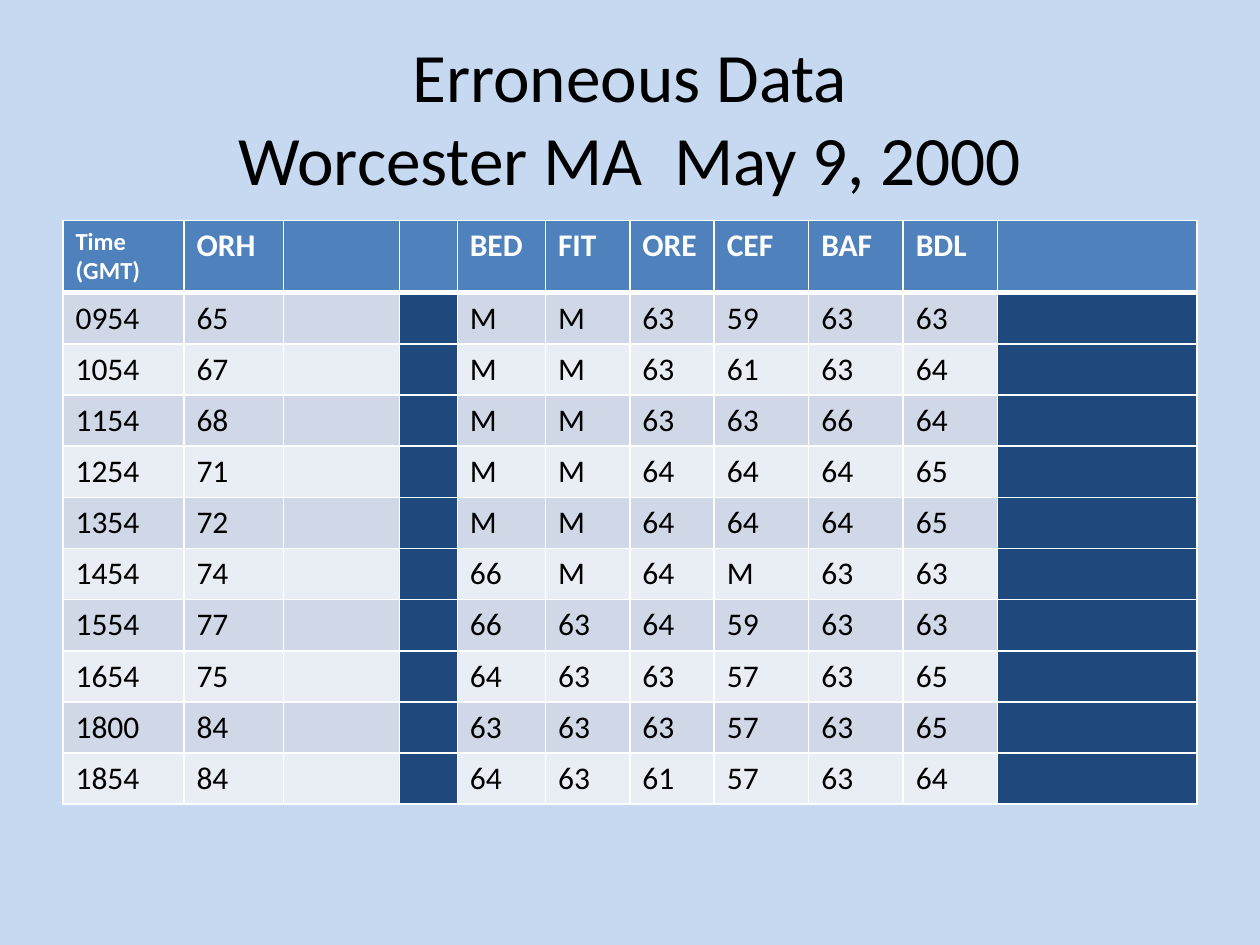
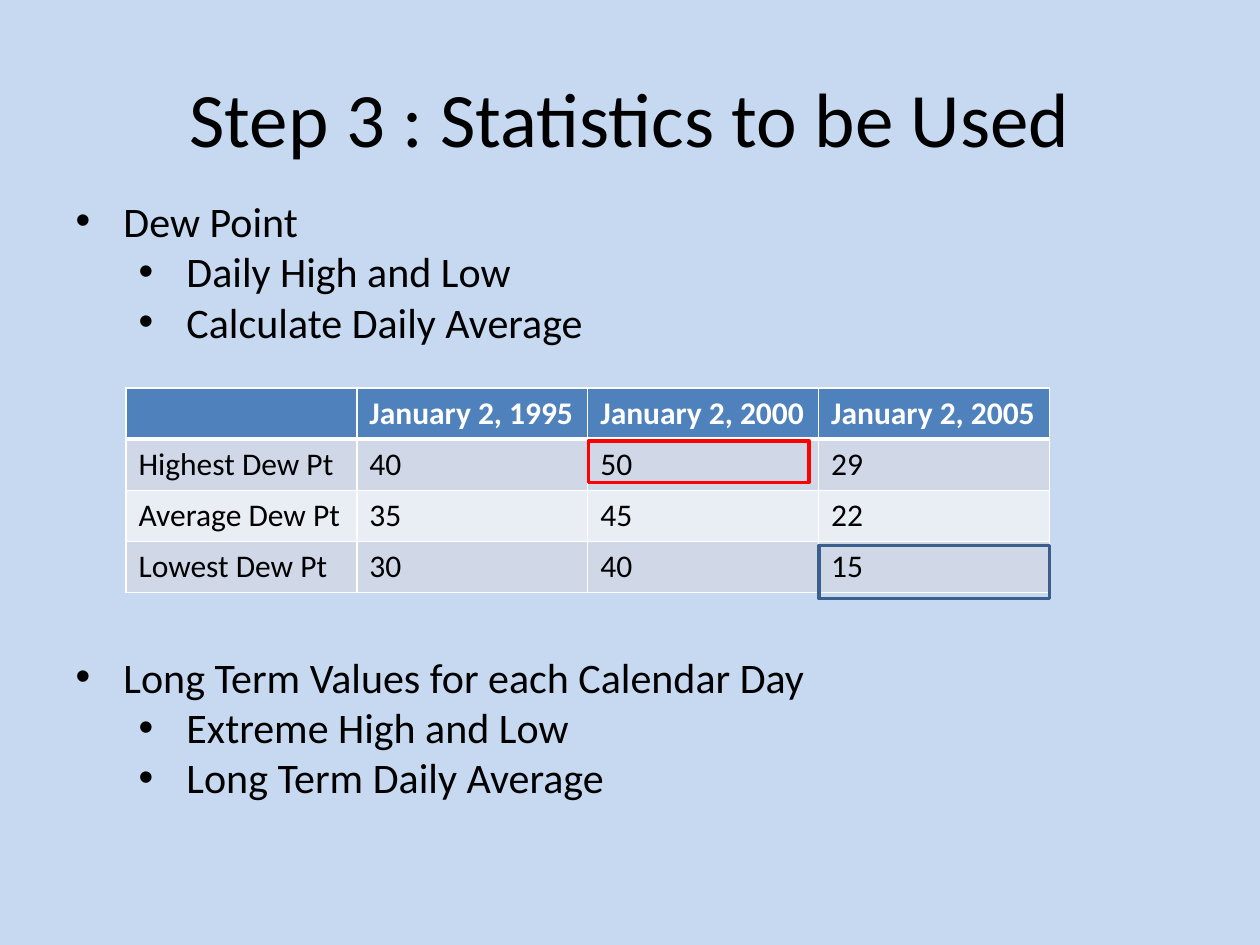
"""Build two slides on erroneous dew point data and the statistics to be used."""
from copy import deepcopy

from lxml import etree
from pptx import Presentation
from pptx.dml.color import RGBColor
from pptx.enum.shapes import MSO_SHAPE
from pptx.enum.text import MSO_ANCHOR, MSO_AUTO_SIZE, PP_ALIGN
from pptx.oxml.ns import qn
from pptx.util import Inches, Pt

RECTANGLE = MSO_SHAPE.RECTANGLE
MIDDLE = MSO_ANCHOR.MIDDLE
NO_AUTOFIT = MSO_AUTO_SIZE.NONE
CENTER, LEFT = PP_ALIGN.CENTER, PP_ALIGN.LEFT

FONT = "Calibri"
COLORS = {
    "background": "C6D9F1",
    "text": "000000",
    "white": "FFFFFF",
    "header": "4F81BD",
    "odd_row": "D0D8E8",
    "even_row": "E9EDF4",
    "blank_column": "1F497D",
    "high": "FF0000",
    "low": "3A5F8C",
}


def write(paragraph, text, size=18, color="text", bold=False, align=LEFT):
    paragraph.text = text
    paragraph.alignment = align
    for run in paragraph.runs:
        run.font.name = FONT
        run.font.size = Pt(size)
        run.font.bold = bold
        run.font.color.rgb = RGBColor.from_string(COLORS[color])
    for line_break in paragraph._p.findall(qn("a:br")):
        line_break.append(deepcopy(paragraph.runs[0]._r.rPr))


def add_grid(slide, rows, left, top, widths, heights, blank_columns=(), small_cells=()):
    frame = slide.shapes.add_table(
        len(rows), len(widths), Inches(left), Inches(top),
        Inches(sum(widths)), Inches(sum(heights)))
    table = frame.table
    for column, width in zip(table.columns, widths):
        column.width = Inches(width)
    for row_index, values in enumerate(rows):
        table.rows[row_index].height = Inches(heights[row_index])
        is_header = row_index == 0
        for column_index, value in enumerate(values):
            cell = table.cell(row_index, column_index)
            if is_header:
                fill = "header"
            elif column_index in blank_columns:
                fill = "blank_column"
            else:
                fill = "odd_row" if row_index % 2 else "even_row"
            cell.fill.solid()
            cell.fill.fore_color.rgb = RGBColor.from_string(COLORS[fill])
            if value:
                write(cell.text_frame.paragraphs[0], value, bold=is_header,
                      size=14 if (row_index, column_index) in small_cells else 18,
                      color="white" if is_header else "text")
            properties = cell._tc.get_or_add_tcPr()
            edges = {"L": 1, "R": 1, "T": 3 if row_index == 1 else 1, "B": 3 if is_header else 1}
            for position, (edge, weight) in enumerate(edges.items()):
                border = etree.Element(qn(f"a:ln{edge}"), w=str(Pt(weight)))
                solid_fill = etree.SubElement(border, qn("a:solidFill"))
                etree.SubElement(solid_fill, qn("a:srgbClr"), val=COLORS["white"])
                properties.insert(position, border)


presentation = Presentation()
presentation.slide_width = Inches(10)
presentation.slide_height = Inches(7.5)
background = presentation.slide_master.background.fill
background.solid()
background.fore_color.rgb = RGBColor.from_string(COLORS["background"])

slides = []
for layout_index, title_text, title_size in [
    (5, "Erroneous Data\vWorcester MA  May 9, 2000", 39.6),
    (1, "Step 3 : Statistics to be Used", 44),
]:
    slide = presentation.slides.add_slide(presentation.slide_layouts[layout_index])
    title = slide.shapes.title
    title.left, title.top, title.width, title.height = map(Inches, (0.5, 0.3, 9, 1.25))
    title.text_frame.auto_size = NO_AUTOFIT
    title.text_frame.vertical_anchor = MIDDLE
    write(title.text_frame.paragraphs[0], title_text, size=title_size, align=CENTER)
    slides.append(slide)
data_slide, statistics_slide = slides

station_rows = [["Time (GMT)", "ORH", "", "", "BED", "FIT", "ORE", "CEF", "BAF", "BDL", ""]]
for reading in [
    "0954 65 M M 63 59 63 63",
    "1054 67 M M 63 61 63 64",
    "1154 68 M M 63 63 66 64",
    "1254 71 M M 64 64 64 65",
    "1354 72 M M 64 64 64 65",
    "1454 74 66 M 64 M 63 63",
    "1554 77 66 63 64 59 63 63",
    "1654 75 64 63 63 57 63 65",
    "1800 84 63 63 63 57 63 65",
    "1854 84 64 63 61 57 63 64",
]:
    time, worcester, *neighbors = reading.split()
    station_rows.append([time, worcester, "", "", *neighbors, ""])
add_grid(data_slide, station_rows, 0.5, 1.75,
         [0.96, 0.79, 0.92, 0.46, 0.7, 0.67, 0.67, 0.75, 0.75, 0.75, 1.58],
         [0.56] + [4.06 / 10] * 10, blank_columns=(3, 10), small_cells=[(0, 0)])

body = statistics_slide.placeholders[1]
body.left, body.top, body.width, body.height = map(Inches, (0.5, 1.5, 6.58, 4.95))
body.text_frame.auto_size = NO_AUTOFIT
for index, (level, text, space_before) in enumerate([
    (0, "Dew Point", 0),
    (1, "Daily High and Low", 0),
    (1, "Calculate Daily Average", 0),
    (0, "Long Term Values for each Calendar Day", 174),
    (1, "Extreme High and Low", 0),
    (1, "Long Term Daily Average", 0),
]):
    paragraph = body.text_frame.add_paragraph() if index else body.text_frame.paragraphs[0]
    write(paragraph, text, size=24)
    paragraph.level = level
    paragraph.space_before = Pt(space_before)
    properties = paragraph._p.get_or_add_pPr()
    properties.set("marL", str(Inches(0.38 + 0.5 * level)))
    properties.set("indent", str(Inches(-0.38)))
    etree.SubElement(properties, qn("a:buFont"), typeface="Arial")
    etree.SubElement(properties, qn("a:buChar"), char="•")

dew_point_rows = [
    ["", "January 2, 1995", "January 2, 2000", "January 2, 2005"],
    ["Highest Dew Pt", "40", "50", "29"],
    ["Average Dew Pt", "35", "45", "22"],
    ["Lowest Dew Pt", "30", "40", "15"],
]
add_grid(statistics_slide, dew_point_rows, 1, 3.08, [7.33 / 4] * 4, [1.62 / 4] * 4)

for color, bounds in [("high", (4.67, 3.5, 1.75, 0.33)), ("low", (6.5, 4.33, 1.83, 0.42))]:
    shape = statistics_slide.shapes.add_shape(RECTANGLE, *map(Inches, bounds))
    shape.shadow.inherit = False
    shape.fill.background()
    shape.line.color.rgb = RGBColor.from_string(COLORS[color])
    shape.line.width = Pt(2)

presentation.save("out.pptx")
